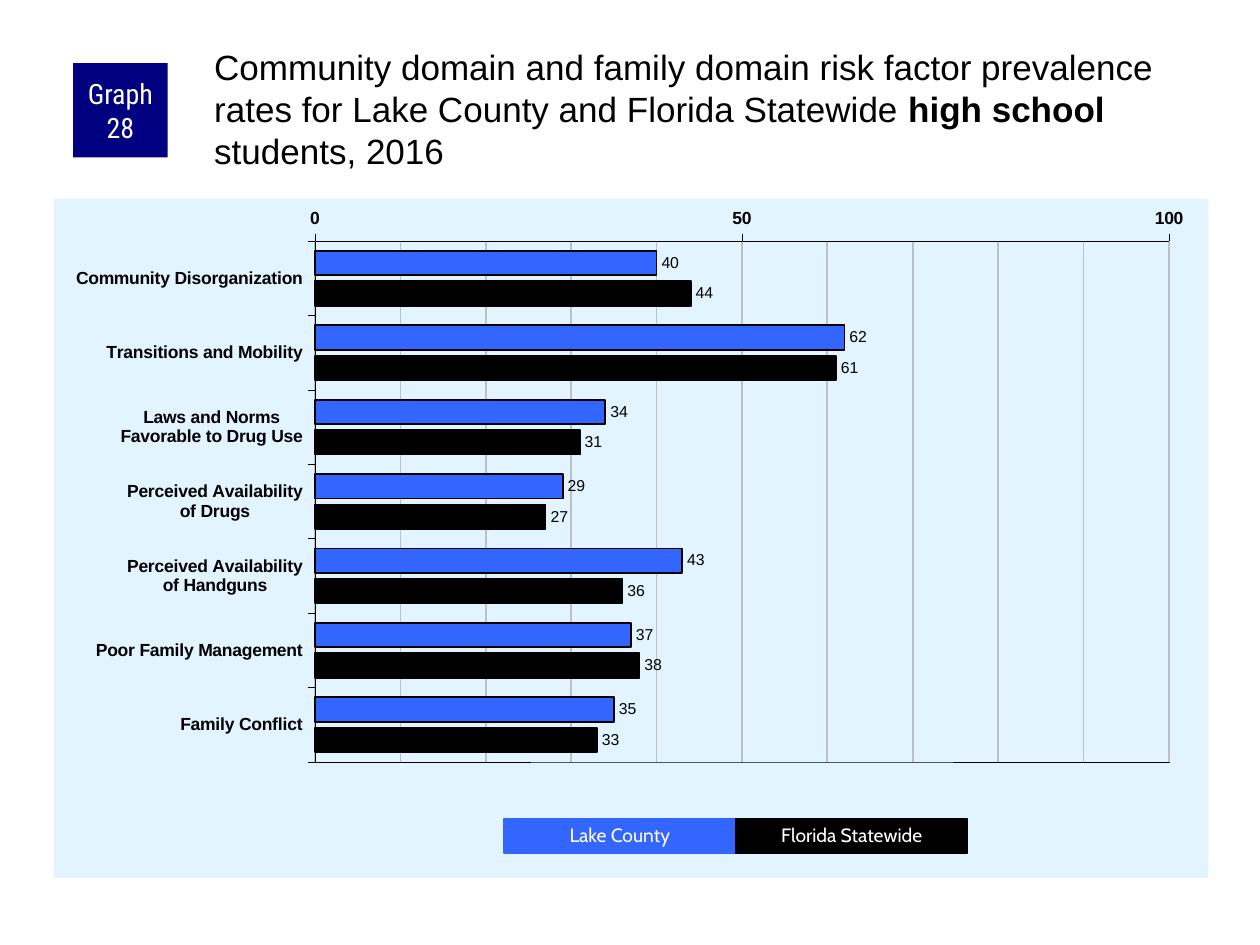
from copy import deepcopy

from lxml import etree
from pptx import Presentation
from pptx.chart.data import CategoryChartData
from pptx.dml.color import RGBColor
from pptx.enum.chart import XL_AXIS_CROSSES, XL_CHART_TYPE, XL_LABEL_POSITION, XL_TICK_MARK
from pptx.enum.shapes import MSO_SHAPE
from pptx.enum.text import MSO_ANCHOR, PP_ALIGN
from pptx.oxml import parse_xml
from pptx.oxml.ns import nsdecls, qn
from pptx.util import Inches, Pt

TITLE = [
    ("Community domain and family domain risk factor prevalence rates "
     "for Lake County and Florida Statewide ", False),
    ("high school", True),
    (" students, 2016", False),
]
RATES = [
    ("Community Disorganization", 40, 44),
    ("Transitions and Mobility", 62, 61),
    ("Laws and Norms\nFavorable to Drug Use", 34, 31),
    ("Perceived Availability\nof Drugs", 29, 27),
    ("Perceived Availability\nof Handguns", 43, 36),
    ("Poor Family Management", 37, 38),
    ("Family Conflict", 35, 33),
]
GROUPS = [("Lake County", "3366FF"), ("Florida Statewide", "000000")]
PLOT = {"x": 0.226, "y": 0.062, "w": 0.74, "h": 0.767}
BLACK, WHITE, NAVY, PALE, GRAY = "000000", "FFFFFF", "000080", "E1F4FF", "C0C0C0"


def rgb(code):
    return RGBColor.from_string(code)


def style(font, face, size, color, bold=False):
    font.name, font.size, font.bold = face, Pt(size), bold
    font.color.rgb = rgb(color)


def stroke(line, color, width):
    line.color.rgb = rgb(color)
    line.width = Pt(width)


def add_box(slide, place, text, fill, face, size):
    box = slide.shapes.add_shape(MSO_SHAPE.RECTANGLE, *map(Inches, place))
    box.shadow.inherit = False
    box.fill.solid()
    box.fill.fore_color.rgb = rgb(fill)
    box.line.fill.background()
    frame = box.text_frame
    frame.word_wrap = True
    frame.vertical_anchor = MSO_ANCHOR.MIDDLE
    frame.margin_left = frame.margin_right = Inches(0.05)
    frame.margin_top = frame.margin_bottom = 0
    frame.text = text
    para = frame.paragraphs[0]
    para.alignment = PP_ALIGN.CENTER
    style(para.runs[0].font, face, size, WHITE)
    return box


def area_xml(inner):
    return parse_xml(f'<c:spPr {nsdecls("c", "a")}>{inner}</c:spPr>')


def solid(color):
    return f'<a:solidFill><a:srgbClr val="{color}"/></a:solidFill>'


def frame_plot(chart):
    """Colour the chart area, and fix the place and border of the plot."""
    space = chart.element
    space.find(qn("c:chart")).addnext(area_xml(solid(PALE) + "<a:ln><a:noFill/></a:ln>"))
    area = space.find(qn("c:chart")).find(qn("c:plotArea"))
    for old in area.findall(qn("c:layout")):
        area.remove(old)
    modes = '<c:layoutTarget val="inner"/><c:xMode val="edge"/><c:yMode val="edge"/>'
    spots = "".join(f'<c:{key} val="{val}"/>' for key, val in PLOT.items())
    area.insert(0, parse_xml(
        f'<c:layout {nsdecls("c")}><c:manualLayout>{modes}{spots}</c:manualLayout></c:layout>'))
    area.append(area_xml(f'<a:noFill/><a:ln w="3175">{solid(BLACK)}</a:ln>'))


def add_chart(slide):
    data = CategoryChartData()
    names, *columns = zip(*RATES)
    data.categories = names
    for (name, _), values in zip(GROUPS, columns):
        data.add_series(name, values)
    place = map(Inches, (0.43, 1.58, 9.16, 5.39))
    chart = slide.shapes.add_chart(XL_CHART_TYPE.BAR_CLUSTERED, *place, data).chart
    chart.has_legend = chart.has_title = False
    style(chart.font, "Arial", 11.8, BLACK)

    plot = chart.plots[0]
    plot.gap_width, plot.overlap, plot.vary_by_categories = 80, -25, False
    for series, (_, color) in zip(plot.series, GROUPS):
        series.format.fill.solid()
        series.format.fill.fore_color.rgb = rgb(color)
        stroke(series.format.line, BLACK, 1)
        labels = series.data_labels
        labels.show_value = True
        labels.position = XL_LABEL_POSITION.OUTSIDE_END
        style(labels.font, "Arial", 9, BLACK)

    cats, scale = chart.category_axis, chart.value_axis
    for axis in (cats, scale):
        style(axis.tick_labels.font, "Arial", 10, BLACK, True)
        stroke(axis.format.line, BLACK, 0.25)
        axis.major_tick_mark = XL_TICK_MARK.OUTSIDE
        axis.minor_tick_mark = XL_TICK_MARK.NONE
    cats.reverse_order = True
    cats.crosses = XL_AXIS_CROSSES.MAXIMUM
    scale.minimum_scale, scale.maximum_scale = 0, 100
    scale.major_unit, scale.minor_unit = 50, 10
    scale.has_major_gridlines = scale.has_minor_gridlines = True
    major = scale.major_gridlines
    stroke(major.format.line, GRAY, 1)
    root = chart.element
    look = root.find(f".//{qn('c:majorGridlines')}/{qn('c:spPr')}")
    root.find(f".//{qn('c:minorGridlines')}").append(deepcopy(look))
    frame_plot(chart)


def add_title(slide):
    box = slide.shapes.add_textbox(*map(Inches, (1.67, 0.33, 7.92, 0.83)))
    frame = box.text_frame
    frame.word_wrap = True
    frame.margin_left = frame.margin_top = Inches(0.03)
    frame.margin_right = frame.margin_bottom = 0
    for text, bold in TITLE:
        run = frame.paragraphs[0].add_run()
        run.text = text
        style(run.font, "Arial", 20, BLACK, bold)


def add_key(slide):
    left, width = 4, 1.84
    for i, (name, color) in enumerate(GROUPS):
        box = add_box(slide, (left + i * width, 6.5, width, 0.27), name, color, "Cabin", 11)
        stroke(box.line, color, 0.75)
        box.text_frame.paragraphs[0].line_spacing = 0.9


def main():
    deck = Presentation()
    deck.slide_width, deck.slide_height = Inches(10), Inches(7.5)
    slide = deck.slides.add_slide(deck.slide_layouts[6])
    add_chart(slide)
    add_box(slide, (0.58, 0.5, 0.75, 0.75), "Graph 28", NAVY, "Roboto Condensed", 16)
    add_title(slide)
    add_key(slide)
    deck.save("out.pptx")


if __name__ == "__main__":
    main()
